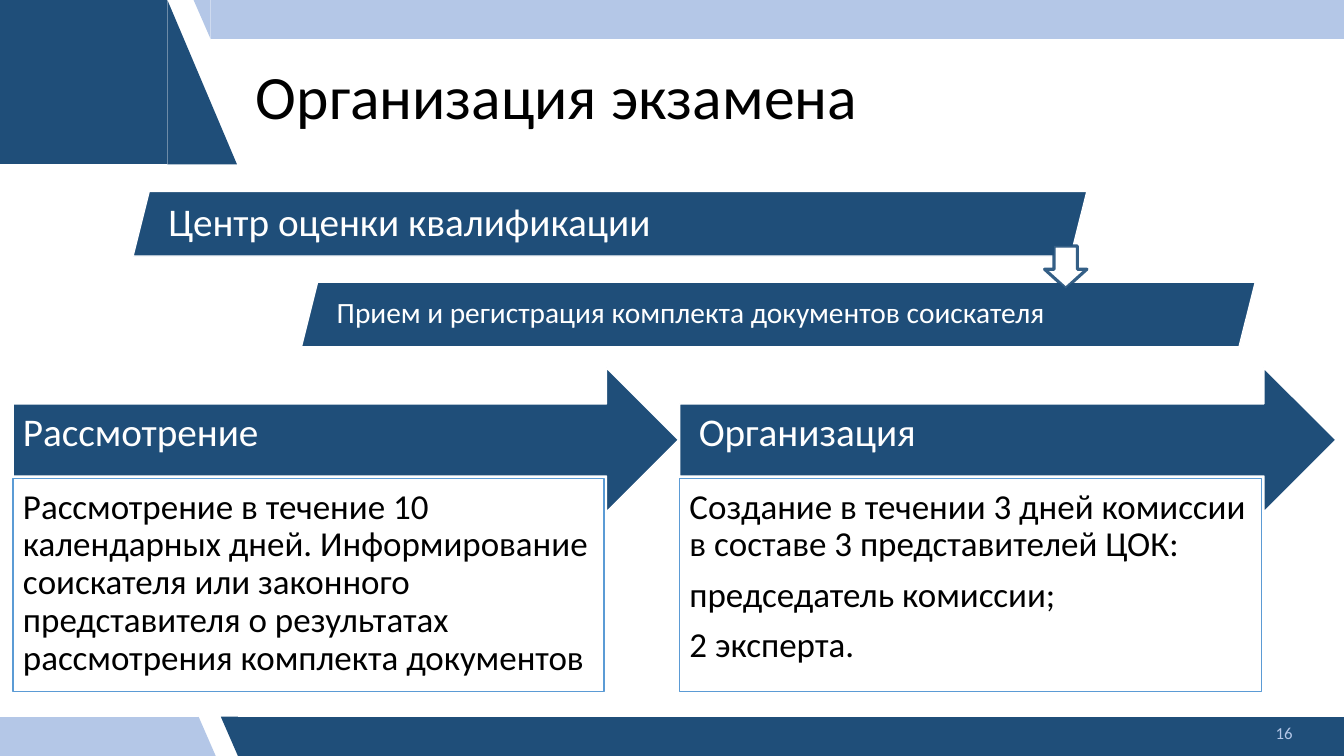
from lxml.etree import SubElement
from pptx import Presentation
from pptx.dml.color import RGBColor
from pptx.enum.shapes import MSO_SHAPE as SHAPE
from pptx.enum.text import MSO_ANCHOR as ANCHOR, PP_ALIGN as ALIGN
from pptx.oxml.ns import qn
from pptx.util import Inches, Pt

NAVY = RGBColor(0x1F, 0x4E, 0x79)
PALE_BLUE = RGBColor(0xB4, 0xC7, 0xE7)
BORDER_BLUE = RGBColor(0x5B, 0x9B, 0xD5)
WHITE = RGBColor(0xFF, 0xFF, 0xFF)
BLACK = RGBColor(0, 0, 0)

WIDTH, HEIGHT = 13.33, 7.5
STRIP_HEIGHT = 0.39
SLANT = 0.17
FONT = "Calibri"


def paint(shape, fill, line=None, line_width=1):
    shape.shadow.inherit = False
    shape.fill.solid()
    shape.fill.fore_color.rgb = fill
    if line is None:
        shape.line.fill.background()
    else:
        shape.line.color.rgb = line
        shape.line.width = Pt(line_width)


def add_preset(slide, preset, box, fill, line=None, line_width=1):
    shape = slide.shapes.add_shape(preset, *map(Inches, box))
    paint(shape, fill, line, line_width)
    return shape


def write(shape, text, size, color, insets=(0.1, 0.05, 0.1, 0.05),
          anchor=ANCHOR.MIDDLE, align=ALIGN.LEFT):
    """Fill a shape with text; insets are left, top, right, bottom."""
    frame = shape.text_frame
    frame.word_wrap = True
    frame.vertical_anchor = anchor
    (frame.margin_left, frame.margin_top,
     frame.margin_right, frame.margin_bottom) = map(Inches, insets)
    frame.text = text
    for paragraph in frame.paragraphs:
        paragraph.alignment = align
        paragraph.line_spacing = 0.9
        paragraph.space_after = Pt(round(size * 0.35))
        paragraph.font.name = FONT
        paragraph.font.size = Pt(size)
        paragraph.font.color.rgb = color


def add_strip(slide, box, fill, slant_on_left):
    """Draw a strip with a slanted extension on one side."""
    left, top, width, height = box
    strip = add_preset(slide, SHAPE.FLOWCHART_PROCESS, box, fill)
    slant_left = left - SLANT if slant_on_left else left + width
    slant = add_preset(slide, SHAPE.RIGHT_TRIANGLE,
                       (slant_left, top, SLANT, height), fill)
    if slant_on_left:
        strip.rotation = slant.rotation = 180


def add_frame(slide):
    """Draw the strips and the corner block around the slide."""
    bottom = HEIGHT - STRIP_HEIGHT
    add_strip(slide, (2.36, bottom, WIDTH - 2.36, STRIP_HEIGHT), NAVY, True)
    add_strip(slide, (0, bottom, 1.97, STRIP_HEIGHT), PALE_BLUE, False)
    add_strip(slide, (2.09, 0, WIDTH - 2.09, STRIP_HEIGHT), PALE_BLUE, True)
    corner_width, corner_height = 1.66, 1.63
    add_preset(slide, SHAPE.FLOWCHART_PROCESS,
               (0, 0, corner_width, corner_height), NAVY)
    add_preset(slide, SHAPE.RIGHT_TRIANGLE,
               (corner_width, 0, 0.69, corner_height), NAVY)


def add_label(slide, box, text, size, color, align=ALIGN.LEFT):
    label = slide.shapes.add_textbox(*map(Inches, box))
    write(label, text, size, color, align=align)


def add_band(slide, box, text, size):
    left, top, width, height = box
    lean = height / 4
    right, bottom = left + width, top + height
    builder = slide.shapes.build_freeform(Inches(left), Inches(bottom))
    corners = [(left + lean, top), (right, top), (right - lean, bottom)]
    builder.add_line_segments([(Inches(x), Inches(y)) for x, y in corners])
    band = builder.convert_to_shape()
    paint(band, NAVY, WHITE)
    write(band, text, size, WHITE, (0.35, 0.1, 0, 0.1))


def add_intake(slide, box):
    """Draw two staggered bands linked by a small down arrow."""
    left, top, width, height = box
    shift, step, link_size = 1.67, 0.9, 0.42
    band_width, band_height = width - shift, height - step
    add_band(slide, (left, top, band_width, band_height),
             "Центр оценки квалификации", 28)
    add_band(slide, (left + shift, top + step, band_width, band_height),
             "Прием и регистрация комплекта документов соискателя", 21)
    link_left = left + band_width - link_size
    link = add_preset(slide, SHAPE.DOWN_ARROW,
                      (link_left, top + 0.54, link_size, link_size),
                      WHITE, NAVY, 2.25)
    link.adjustments[0], link.adjustments[1] = 0.55, 0.45
    line_color = link.line.fill.fore_color
    line_color.rgb = NAVY
    for rgb in link.element.spPr.find(qn("a:ln")).iter(qn("a:srgbClr")):
        SubElement(rgb, qn("a:alpha"), val="90000")


def add_stage(slide, box, detail_width, heading, heading_inset, detail):
    """Draw a heading arrow with a detail box under its shaft."""
    left, top, width, height = box
    arrow = add_preset(slide, SHAPE.RIGHT_ARROW, (left, top, width, 1.43),
                       NAVY, WHITE)
    write(arrow, heading, 28, WHITE, (heading_inset, 0, 0.63, 0.12))
    detail_top = 1.1
    detail_box = add_preset(
        slide, SHAPE.RECTANGLE,
        (left, top + detail_top, detail_width, height - detail_top),
        WHITE, BORDER_BLUE)
    write(detail_box, detail, 25, BLACK, (0.1,) * 4, ANCHOR.TOP)


def main():
    presentation = Presentation()
    presentation.slide_width = Inches(WIDTH)
    presentation.slide_height = Inches(HEIGHT)
    slide = presentation.slides.add_slide(presentation.slide_layouts[6])

    add_frame(slide)
    add_intake(slide, (1.32, 1.9, 11.13, 1.54))
    add_label(slide, (2.44, 0.5, 10.01, 0.97), "Организация экзамена", 44, BLACK)
    add_stage(slide, (0.13, 3.65, 6.6, 3.21), 5.86, "Рассмотрение", 0.1,
              "Рассмотрение в течение 10 календарных дней. Информирование "
              "соискателя или законного представителя о результатах "
              "рассмотрения комплекта документов")
    add_stage(slide, (6.74, 3.65, 6.51, 3.21), 5.77, "Организация", 0.19,
              "Создание в течении 3 дней комиссии в составе 3 "
              "представителей ЦОК:\nпредседатель комиссии;\n2 эксперта.")
    add_label(slide, (9.92, 7.08, 3, 0.4), "16", 12, PALE_BLUE, ALIGN.RIGHT)

    presentation.save("out.pptx")


if __name__ == "__main__":
    main()
